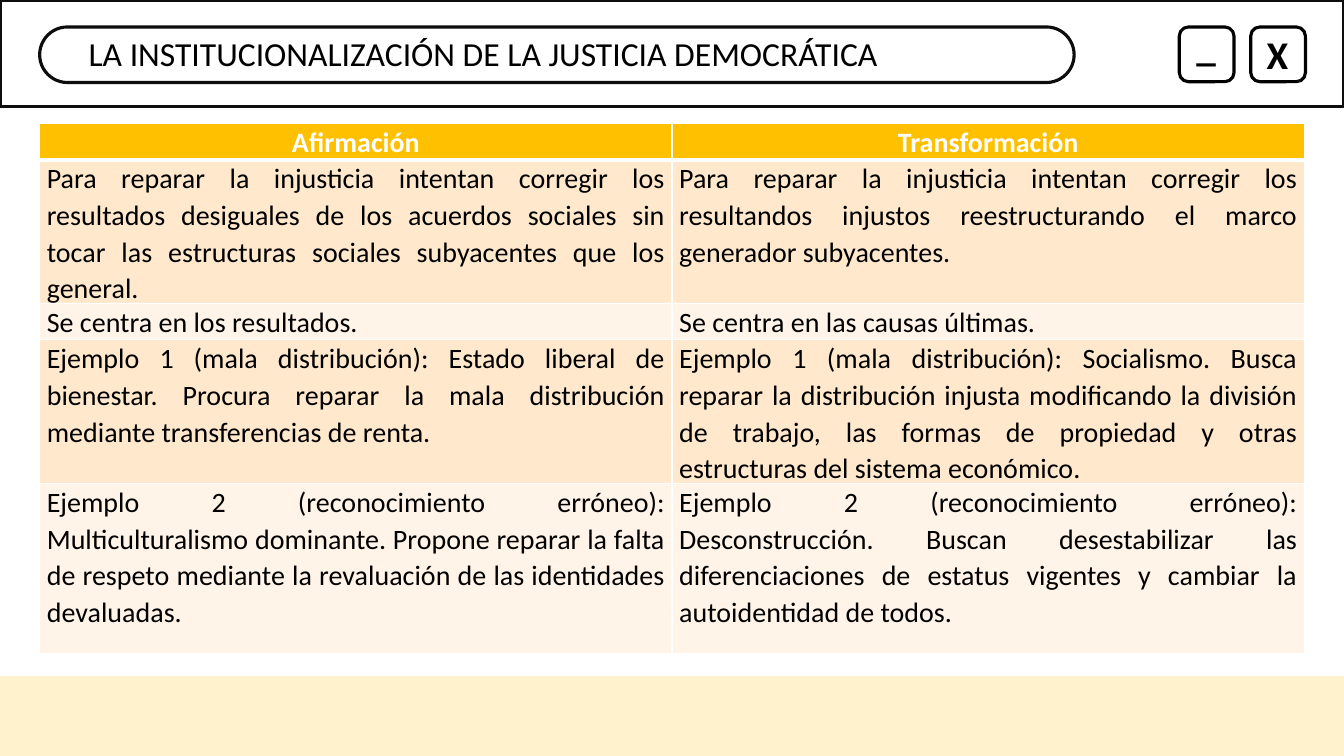
from dataclasses import dataclass

from lxml.etree import SubElement
from pptx import Presentation
from pptx.dml.color import RGBColor
from pptx.enum.shapes import MSO_SHAPE as Preset
from pptx.enum.text import MSO_ANCHOR as Anchor, MSO_AUTO_SIZE as AutoSize, PP_ALIGN as Align
from pptx.oxml.ns import qn
from pptx.util import Cm, Pt

COLORS = {
    "white": "FFFFFF",
    "black": "000000",
    "outline": "0D0D0D",
    "footer": "FFF2CC",
    "header": "FFC000",
    "band_dark": "FFE8CC",
    "band_light": "FFF4E7",
}
FONT = "Calibri"


@dataclass
class Box:
    left: float
    top: float
    width: float
    height: float

    def lengths(self) -> list:
        return [Cm(value) for value in (self.left, self.top, self.width, self.height)]


@dataclass
class Panel:
    box: Box
    preset: Preset
    fill: str
    line: str | None = None
    rounding: float | None = None


@dataclass
class Label:
    text: str
    box: Box


PANELS = [
    Panel(Box(0, 0, 33.87, 2.69), Preset.RECTANGLE, "white", "outline"),
    Panel(Box(31.52, 0.68, 1.38, 1.38), Preset.ROUNDED_RECTANGLE, "white", "black"),
    Panel(Box(29.72, 0.68, 1.38, 1.38), Preset.ROUNDED_RECTANGLE, "white", "black"),
    Panel(Box(1, 0.68, 26.07, 1.4), Preset.ROUNDED_RECTANGLE, "white", "outline", 0.5),
    Panel(Box(0, 17.04, 33.87, 2.01), Preset.RECTANGLE, "footer"),
]
BUTTON_LABELS = [
    Label("X", Box(31.67, 0.64, 1.57, 1.45)),
    Label("_", Box(29.9, 0.43, 1.09, 1.45)),
]
TITLE = Label("LA INSTITUCIONALIZACIÓN DE LA JUSTICIA DEMOCRÁTICA", Box(1.98, 0.71, 22.81, 1.27))

TABLE_BOX = Box(1, 3.12, 31.87, 12.83)
ROW_HEIGHTS = [0.84, 3.43, 0.84, 3.43, 4.29]
ROWS = [
    ("Afirmación", "Transformación"),
    (
        "Para reparar la injusticia intentan corregir los resultados desiguales de los acuerdos "
        "sociales sin tocar las estructuras sociales subyacentes que los general.",
        "Para reparar la injusticia intentan corregir los resultandos injustos reestructurando "
        "el marco generador subyacentes.",
    ),
    ("Se centra en los resultados.", "Se centra en las causas últimas."),
    (
        "Ejemplo 1 (mala distribución): Estado liberal de bienestar. Procura reparar la mala "
        "distribución mediante transferencias de renta.",
        "Ejemplo 1 (mala distribución): Socialismo. Busca reparar la distribución injusta "
        "modificando la división de trabajo, las formas de propiedad y otras estructuras del "
        "sistema económico.",
    ),
    (
        "Ejemplo 2 (reconocimiento erróneo): Multiculturalismo dominante. Propone reparar la "
        "falta de respeto mediante la revaluación de las identidades devaluadas.",
        "Ejemplo 2 (reconocimiento erróneo): Desconstrucción. Buscan desestabilizar las "
        "diferenciaciones de estatus vigentes y cambiar la autoidentidad de todos.",
    ),
]


def rgb(name: str) -> RGBColor:
    return RGBColor.from_string(COLORS[name])


def apply(target, values: dict) -> None:
    for name, value in values.items():
        setattr(target, name, value)


def write(frame, text: str, size: int, color: str, bold: bool, align: Align, spacing: float = 1) -> None:
    frame.text = text
    paragraph = frame.paragraphs[0]
    apply(paragraph, {"alignment": align, "line_spacing": spacing})
    apply(paragraph.font, {"name": FONT, "size": Pt(size), "bold": bold})
    paragraph.font.color.rgb = rgb(color)


def add_panel(slide, panel: Panel) -> None:
    shape = slide.shapes.add_shape(panel.preset, *panel.box.lengths())
    shape.shadow.inherit = False
    shape.fill.solid()
    shape.fill.fore_color.rgb = rgb(panel.fill)
    if panel.rounding is not None:
        shape.adjustments[0] = panel.rounding
    if panel.line:
        shape.line.color.rgb = rgb(panel.line)
        shape.line.width = Pt(2.25)
    else:
        shape.line.fill.background()


def place_text(shape, label: Label, size: int, bold: bool) -> None:
    apply(shape, dict(zip(("left", "top", "width", "height"), label.box.lengths())))
    frame = shape.text_frame
    apply(frame, {"word_wrap": True, "auto_size": AutoSize.SHAPE_TO_FIT_TEXT, "vertical_anchor": Anchor.TOP})
    write(frame, label.text, size, "black", bold, Align.LEFT)


def add_borders(cell, bottom_width: float) -> None:
    properties = cell._tc.get_or_add_tcPr()
    for side in "LRTB":
        width = bottom_width if side == "B" else 1
        line = SubElement(properties, qn(f"a:ln{side}"), w=str(Pt(width)))
        fill = SubElement(line, qn("a:solidFill"))
        SubElement(fill, qn("a:srgbClr"), val=COLORS["white"])


def add_comparison(slide) -> None:
    table = slide.shapes.add_table(len(ROWS), 2, *TABLE_BOX.lengths()).table
    for column in table.columns:
        column.width = Cm(TABLE_BOX.width / 2)
    for row_index, (texts, height) in enumerate(zip(ROWS, ROW_HEIGHTS)):
        table.rows[row_index].height = Cm(height)
        is_header = row_index == 0
        band = "header" if is_header else ("band_light", "band_dark")[row_index % 2]
        for column_index, text in enumerate(texts):
            cell = table.cell(row_index, column_index)
            apply(cell, {"margin_left": Cm(0.18), "margin_right": Cm(0.18), "margin_top": 0, "margin_bottom": 0})
            write(
                cell.text_frame, text, 20, "white" if is_header else "black", is_header,
                Align.CENTER if is_header else Align.JUSTIFY, 1.07,
            )
            add_borders(cell, 3 if is_header else 1)
            cell.fill.solid()
            cell.fill.fore_color.rgb = rgb(band)


def main() -> None:
    presentation = Presentation()
    apply(presentation, {"slide_width": Cm(33.87), "slide_height": Cm(19.05)})
    slide = presentation.slides.add_slide(presentation.slide_layouts[5])

    # Window bar, buttons, title pill and footer band
    for panel in PANELS:
        add_panel(slide, panel)
    for label in BUTTON_LABELS:
        place_text(slide.shapes.add_textbox(*label.box.lengths()), label, 28, True)

    # Title, brought in front of its pill
    title = slide.shapes.title
    place_text(title, TITLE, 24, False)
    title.element.getparent().append(title.element)

    # Comparison table
    add_comparison(slide)
    presentation.save("out.pptx")


if __name__ == "__main__":
    main()
